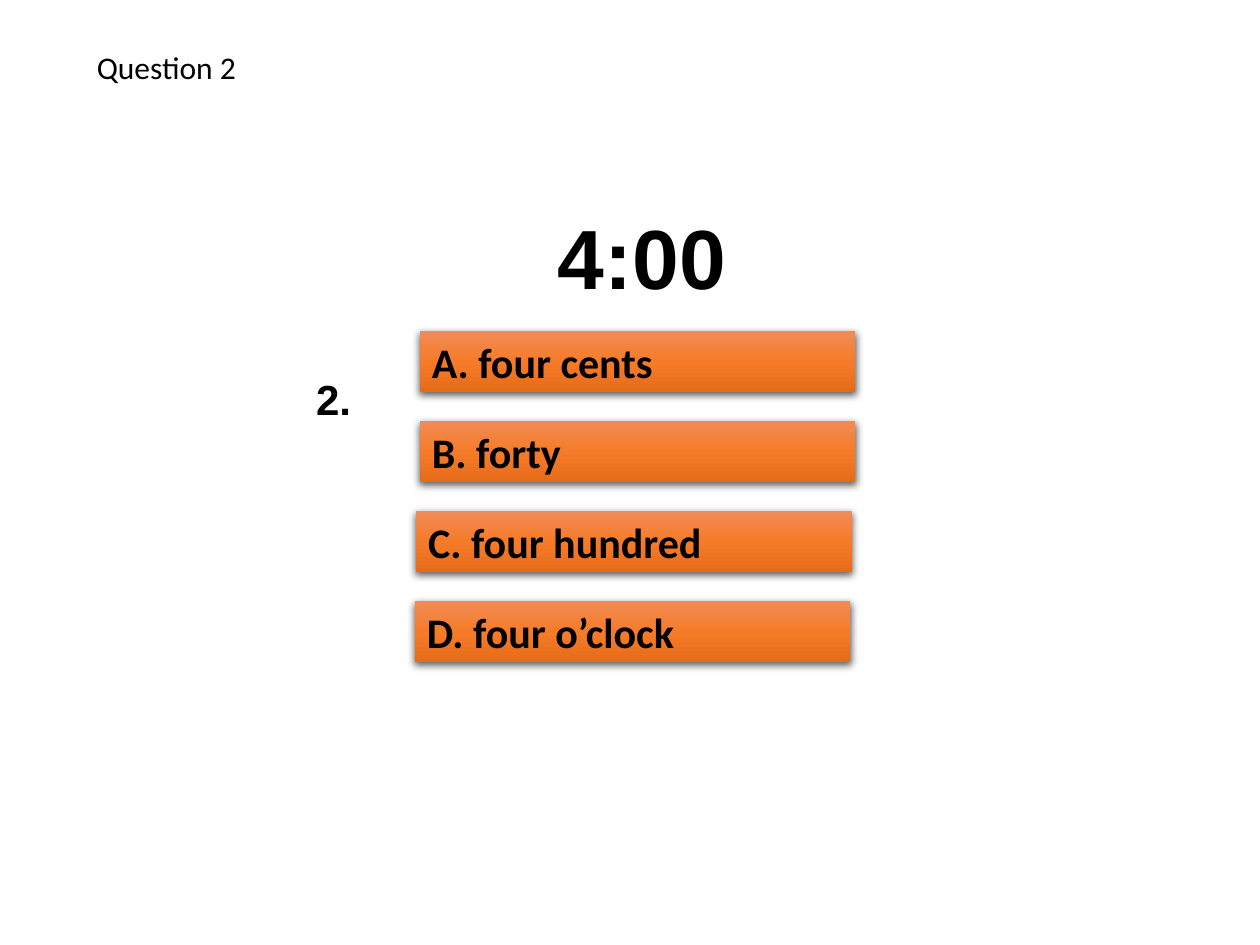
from copy import deepcopy

from lxml.etree import SubElement
from pptx import Presentation
from pptx.dml.color import RGBColor
from pptx.enum.shapes import MSO_SHAPE
from pptx.enum.text import MSO_ANCHOR, PP_ALIGN
from pptx.oxml.ns import qn
from pptx.util import Inches, Pt

COLORS = {
    "text": "000000",
    "shadow": "000000",
    "button_top": "F18C57",
    "button_middle": "F67B28",
    "button_bottom": "E56C19",
}
SLIDE_WIDTH, SLIDE_HEIGHT = Inches(10), Inches(7.5)

# The answers stand in rows of a grid; each has a slight sideways shift
ROW_PITCH = Inches(0.715)
ANSWERS = [
    ("A. four cents", 0.04),
    ("B. forty", 0.04),
    ("C. four hundred", 0.01),
    ("D. four o’clock", 0),
]


def write(frame, text, size, font_name, bold=True):
    frame.text = text
    line = frame.paragraphs[0]
    line.alignment = PP_ALIGN.LEFT
    font = line.runs[0].font
    font.size, font.name, font.bold = Pt(size), font_name, bold
    font.color.rgb = RGBColor.from_string(COLORS["text"])


def add_label(slide, box, text, size, font_name, bold=True):
    label = slide.shapes.add_textbox(*box)
    label.text_frame.word_wrap = False
    write(label.text_frame, text, size, font_name, bold)


def shade_button(button):
    # Three-stop gradient running downwards
    button.fill.gradient()
    button.fill.gradient_angle = 270
    stops = button.fill._fill._gradFill.gsLst
    stops.insert(1, deepcopy(stops[0]))
    shades = ("button_top", "button_middle", "button_bottom")
    for index, (stop, shade) in enumerate(zip(button.fill.gradient_stops, shades)):
        stop.position = index / 2
        stop.color.rgb = RGBColor.from_string(COLORS[shade])
    button.line.fill.background()

    # Soft shadow below
    button.shadow.inherit = False
    effects = button._element.spPr.find(qn("a:effectLst"))
    shadow = SubElement(effects, qn("a:outerShdw"), blurRad=str(Pt(4.5)),
                        dist=str(Pt(1.5)), dir="5400000", rotWithShape="0")
    tint = SubElement(shadow, qn("a:srgbClr"), val=COLORS["shadow"])
    SubElement(tint, qn("a:alpha"), val="63000")


def add_answers(slide, left, top, width, height):
    for row, (answer, shift) in enumerate(ANSWERS):
        button = slide.shapes.add_shape(
            MSO_SHAPE.ACTION_BUTTON_CUSTOM,
            left + Inches(shift), top + row * ROW_PITCH, width, height)
        shade_button(button)
        button.text_frame.word_wrap = True
        button.text_frame.vertical_anchor = MSO_ANCHOR.MIDDLE
        write(button.text_frame, answer, 24, "Calibri")


def add_question(slide, left, top, width, height):
    def place(x, y, w, h):
        return (left + int(x * width), top + int(y * height),
                int(w * width), int(h * height))

    # Heading, prompt and question number
    add_label(slide, place(0.067, 0.044, 0.15, 0.053), "Question 2", 18, "Calibri", False)
    add_label(slide, place(0.433, 0.211, 0.155, 0.121), "4:00", 48, "Arial")
    add_label(slide, place(0.241, 0.389, 0.048, 0.068), "2.", 24, "Arial")

    # Answer buttons
    add_answers(slide, *place(0.329, 0.35, 0.346, 0.065))


def main():
    deck = Presentation()
    deck.slide_width, deck.slide_height = SLIDE_WIDTH, SLIDE_HEIGHT
    slide = deck.slides.add_slide(deck.slide_layouts[6])
    add_question(slide, 0, 0, SLIDE_WIDTH, SLIDE_HEIGHT)
    deck.save("out.pptx")


if __name__ == "__main__":
    main()
